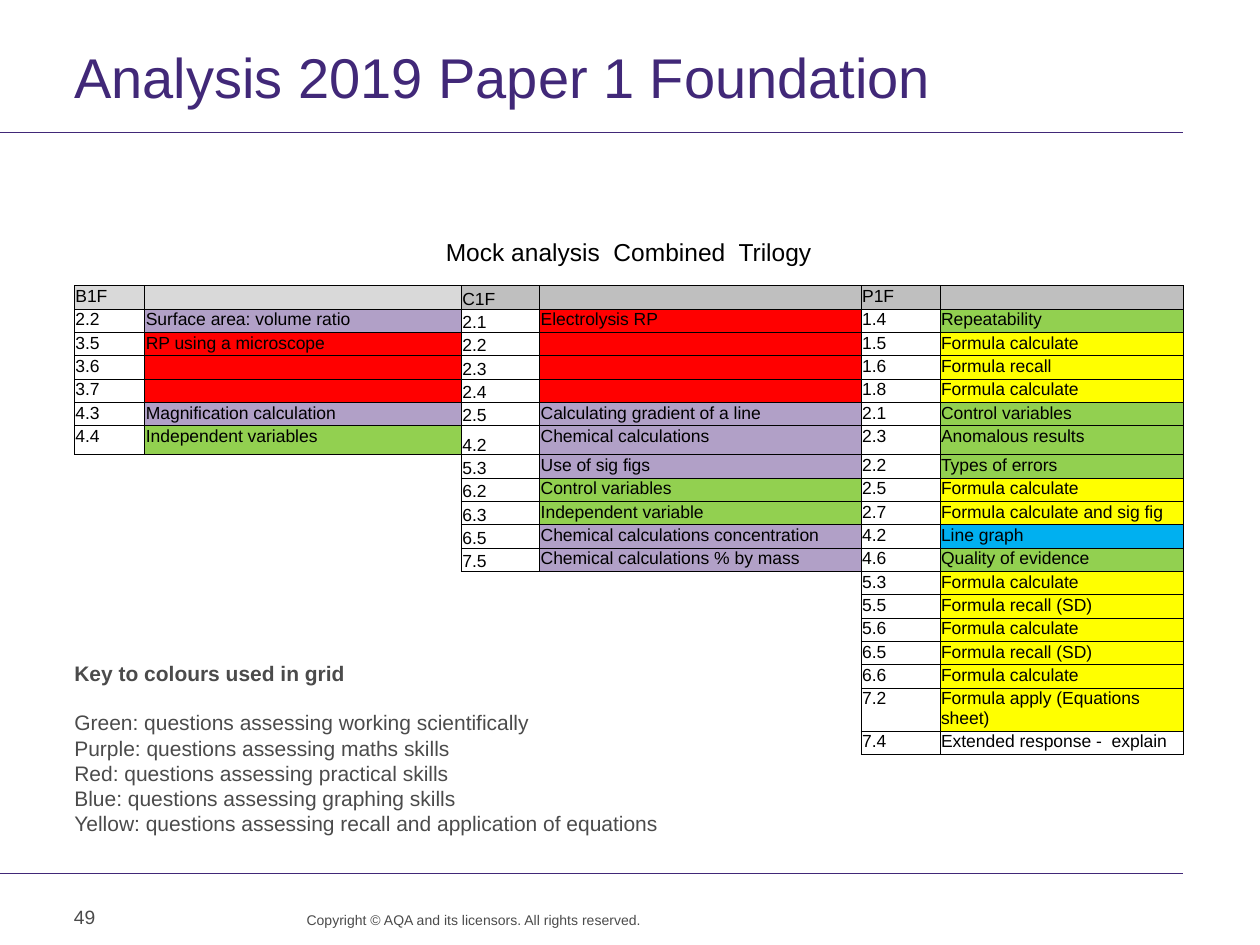
from itertools import accumulate

from lxml import etree
from pptx import Presentation
from pptx import util as u
from pptx.dml.color import RGBColor
from pptx.enum import shapes, text
from pptx.oxml.ns import qn

# Content
TITLE = "Analysis 2019 Paper 1 Foundation"
GRID_TITLE = "Mock analysis  Combined  Trilogy"
FOOTER = "Copyright © AQA and its licensors. All rights reserved."
PAGE = "49"
KEY_HEADING = "Key to colours used in grid"
KEY = [
    "Green: questions assessing working scientifically",
    "Purple: questions assessing maths skills",
    "Red: questions assessing practical skills",
    "Blue: questions assessing graphing skills",
    "Yellow: questions assessing recall and application of equations",
]
# Each paper lists question, topic and skill colour, heading first
BIOLOGY = [
    ("B1F", "", "light head"),
    ("2.2", "Surface area: volume ratio", "purple"),
    ("3.5", "RP using a microscope", "red"),
    ("3.6", "", "red"),
    ("3.7", "", "red"),
    ("4.3", "Magnification calculation", "purple"),
    ("4.4", "Independent variables", "green"),
]
CHEMISTRY = [
    ("C1F", "", "head"),
    ("2.1", "Electrolysis RP", "red"),
    ("2.2", "", "red"),
    ("2.3", "", "red"),
    ("2.4", "", "red"),
    ("2.5", "Calculating gradient of a line", "purple"),
    ("4.2", "Chemical calculations", "purple"),
    ("5.3", "Use of sig figs", "purple"),
    ("6.2", "Control variables", "green"),
    ("6.3", "Independent variable", "green"),
    ("6.5", "Chemical calculations concentration", "purple"),
    ("7.5", "Chemical calculations % by mass", "purple"),
]
PHYSICS = [
    ("P1F", "", "head"),
    ("1.4", "Repeatability", "green"),
    ("1.5", "Formula calculate", "yellow"),
    ("1.6", "Formula recall", "yellow"),
    ("1.8", "Formula calculate", "yellow"),
    ("2.1", "Control variables", "green"),
    ("2.3", "Anomalous results", "green"),
    ("2.2", "Types of errors", "green"),
    ("2.5", "Formula calculate", "yellow"),
    ("2.7", "Formula calculate and sig fig", "yellow"),
    ("4.2", "Line graph", "blue"),
    ("4.6", "Quality of evidence", "green"),
    ("5.3", "Formula calculate", "yellow"),
    ("5.5", "Formula recall (SD)", "yellow"),
    ("5.6", "Formula calculate", "yellow"),
    ("6.5", "Formula recall (SD)", "yellow"),
    ("6.6", "Formula calculate", "yellow"),
    ("7.2", "Formula apply (Equations sheet)", "yellow"),
    ("7.4", "Extended response -  explain", "white"),
]
PAPERS = [BIOLOGY, CHEMISTRY, PHYSICS]

THEME = {
    "font": "Arial",
    "size": {"title": 32, "grid title": 14, "grid": 10, "key": 12, "page": 11, "footer": 8},
    "colour": {
        "brand": "412878", "body": "4B4B4B", "black": "000000", "white": "FFFFFF",
        "light head": "D9D9D9", "head": "BFBFBF", "purple": "B1A0C7", "red": "FF0000",
        "green": "92D050", "yellow": "FFFF00", "blue": "00B0F0",
    },
}

# Measures in cm
LEFT, RIGHT = 1.5, 23.85
RULES = [2.67, 17.6]
COLUMNS = [1.42, 6.38, 1.58, 6.48, 1.59, 4.9]
GRID_TOP, TITLE_ROW, ROW = 4.8, 0.96, 0.47
TALL_ROWS = {7: 0.59, 18: 0.81}
ROW_COUNT = len(PHYSICS) + 2  # title row above, open row below
NO_STYLE = "{2D5ABB26-0587-4C30-8999-92F81FD0307C}"
NO_INSETS = (0, 0, 0, 0)


def rgb(name):
    return RGBColor.from_string(THEME["colour"][name])


def add_run(paragraph, words, size, colour, bold=False):
    run = paragraph.add_run()
    run.text = words
    run.font.name = THEME["font"]
    run.font.size = u.Pt(THEME["size"][size])
    run.font.color.rgb = rgb(colour)
    run.font.bold = bold


def add_text(slide, place, insets=None):
    frame = slide.shapes.add_textbox(*map(u.Cm, place)).text_frame
    frame.word_wrap = True
    if insets:
        (frame.margin_left, frame.margin_top,
         frame.margin_right, frame.margin_bottom) = map(u.Cm, insets)
    return frame


def add_rule(slide, y):
    rule = slide.shapes.add_connector(
        shapes.MSO_CONNECTOR.STRAIGHT, 0, u.Cm(y), u.Cm(RIGHT), u.Cm(y))
    rule.line.color.rgb = rgb("brand")
    rule.line.width = u.Pt(0.6)
    etree.SubElement(rule._element.spPr, qn("a:effectLst"))


def set_borders(cell, edges):
    """edges maps L, R, T, B to (colour, points) or None."""
    properties = cell._tc.get_or_add_tcPr()
    for place, side in enumerate("LRTB"):
        edge = edges.get(side)
        line = etree.Element(qn(f"a:ln{side}"))
        if edge:
            line.set("w", str(u.Pt(edge[1])))
            fill = etree.SubElement(line, qn("a:solidFill"))
            etree.SubElement(fill, qn("a:srgbClr"), val=THEME["colour"][edge[0]])
        else:
            etree.SubElement(line, qn("a:noFill"))
        properties.insert(place, line)


def grid_entries():
    """Map (row, column) to the words and fill of each used cell."""
    entries = {}
    for paper, questions in enumerate(PAPERS):
        for row, (number, topic, colour) in enumerate(questions, 1):
            number_fill = colour if row == 1 else "white"
            entries[row, 2 * paper] = (number, number_fill)
            entries[row, 2 * paper + 1] = (topic, colour)
    return entries


def add_grid(slide):
    heights = [TITLE_ROW] + [TALL_ROWS.get(row, ROW) for row in range(1, ROW_COUNT)]
    table = slide.shapes.add_table(
        ROW_COUNT, len(COLUMNS), u.Cm(LEFT), u.Cm(GRID_TOP),
        u.Cm(sum(COLUMNS)), u.Cm(list(accumulate(heights))[-1])).table
    table._tbl.tblPr.find(qn("a:tableStyleId")).text = NO_STYLE
    table.first_row = table.horz_banding = False
    for column, width in zip(table.columns, COLUMNS):
        column.width = u.Cm(width)
    for row, height in zip(table.rows, heights):
        row.height = u.Cm(height)

    # Title row
    heading = table.cell(0, 0)
    heading.merge(table.cell(0, len(COLUMNS) - 1))
    heading.fill.solid()
    heading.fill.fore_color.rgb = rgb("white")
    heading.text_frame.paragraphs[0].alignment = text.PP_ALIGN.CENTER
    add_run(heading.text_frame.paragraphs[0], GRID_TITLE, "grid title", "black")

    # Questions; an edge shows where a used cell lies on either side of it
    entries = grid_entries()
    small = str(THEME["size"]["grid"] * 100)
    for row in range(ROW_COUNT):
        for column in range(len(COLUMNS)):
            cell = table.cell(row, column)
            cell.margin_left = cell.margin_right = cell.margin_top = u.Cm(0.02)
            cell.margin_bottom = 0
            neighbours = {"L": (row, column - 1), "R": (row, column + 1),
                          "T": (row - 1, column), "B": (row + 1, column)}
            edges = {side: ("black", 0.5) for side, spot in neighbours.items()
                     if (row, column) in entries or spot in entries}
            if row == 0:
                edges["T"] = ("white", 1)
                if column == 0:
                    edges["L"] = ("white", 1)
            words, fill = entries.get((row, column), ("", None))
            paragraph = cell.text_frame.paragraphs[0]
            if fill:
                cell.fill.solid()
                cell.fill.fore_color.rgb = rgb(fill)
            elif row:
                cell.fill.background()
            if words:
                add_run(paragraph, words, "grid", "black")
            elif row:
                etree.SubElement(paragraph._p, qn("a:endParaRPr"), sz=small)
            if column == 2 and words:
                cell.vertical_anchor = text.MSO_ANCHOR.BOTTOM
            set_borders(cell, edges)


def main():
    deck = Presentation()
    deck.slide_width, deck.slide_height = u.Cm(25.4), u.Cm(19.05)
    slide = deck.slides.add_slide(deck.slide_layouts[6])
    for y in RULES:
        add_rule(slide, y)

    # Title
    title = add_text(slide, (LEFT, 1.22, 22.35, 1.19), (0, 0, 0.25, 0)).paragraphs[0]
    title.line_spacing = u.Pt(28)
    add_run(title, TITLE, "title", "brand")

    add_grid(slide)

    # Colour key
    key = add_text(slide, (LEFT, 13.31, 13.06, 3.58), NO_INSETS)
    key.paragraphs[0].space_after = u.Pt(14)
    add_run(key.paragraphs[0], KEY_HEADING, "key", "body", bold=True)
    for meaning in KEY:
        add_run(key.add_paragraph(), meaning, "key", "body")

    # Footer and page number
    footer = add_text(slide, (5.49, 18.36, 7.44, 0.66), NO_INSETS).paragraphs[0]
    footer.alignment = text.PP_ALIGN.RIGHT
    footer.line_spacing = u.Pt(10)
    add_run(footer, FOOTER, "footer", "body")
    page = add_text(slide, (1.24, 17.98, 1.93, 1.02))
    page.vertical_anchor = text.MSO_ANCHOR.MIDDLE
    add_run(page.paragraphs[0], PAGE, "page", "body")

    deck.save("out.pptx")


if __name__ == "__main__":
    main()
